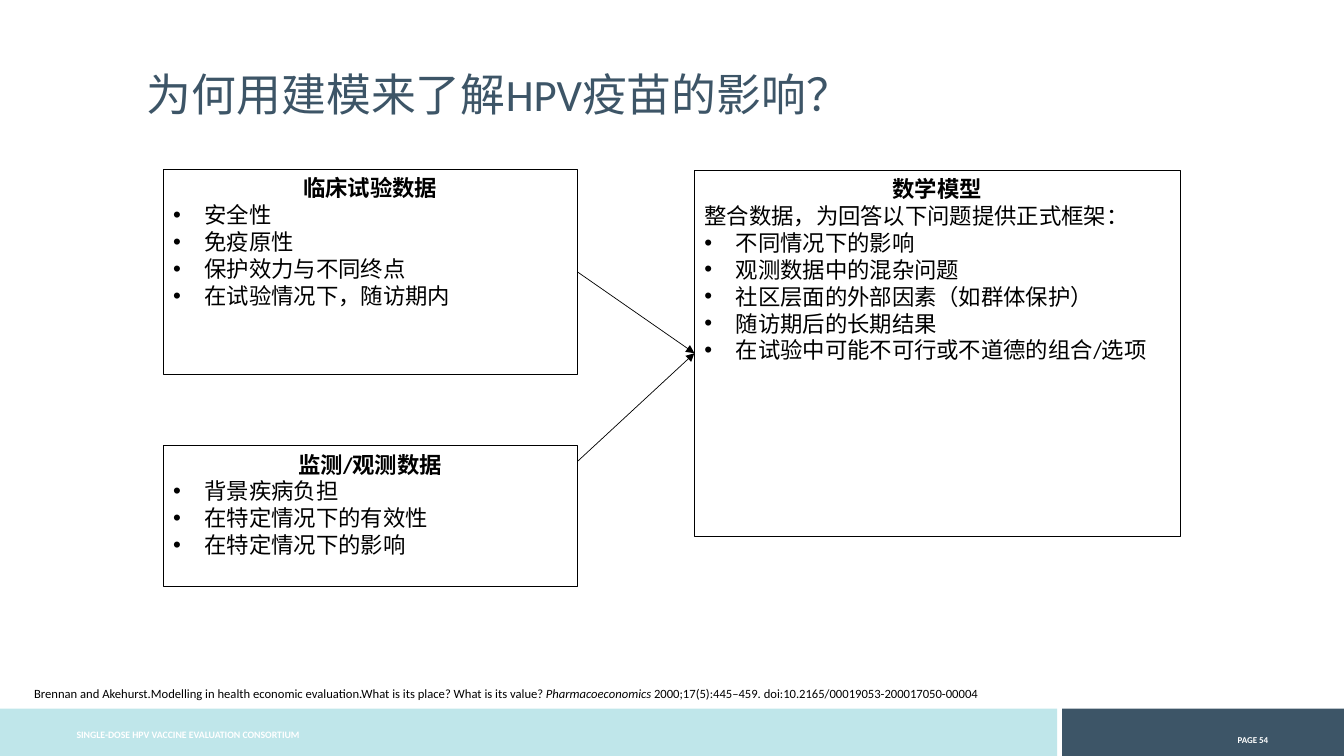
import pptx
import pptx.util
import pptx.dml.color
import pptx.enum.shapes
import pptx.enum.text
import pptx.oxml.ns
import lxml.etree

Cm, Pt = pptx.util.Cm, pptx.util.Pt
ALIGN = pptx.enum.text.PP_ALIGN
ANCHOR = pptx.enum.text.MSO_ANCHOR
qn = pptx.oxml.ns.qn

# Content
COLORS = {"slate": "3D5567", "aqua": "BFE6EA", "white": "FFFFFF", "black": "000000"}
FONT = "Calibri"
TITLE = "为何用建模来了解HPV疫苗的影响？"
# Each box: placeholder index, place in cm, heading, lead line, bullets
BOXES = {
    "trial": (1, (4.11, 4.27, 10.44, 5.16), "临床试验数据", "",
              ["安全性", "免疫原性", "保护效力与不同终点", "在试验情况下，随访期内"]),
    "model": (2, (17.5, 4.29, 12.24, 9.22), "数学模型",
              "整合数据，为回答以下问题提供正式框架：",
              ["不同情况下的影响", "观测数据中的混杂问题",
               "社区层面的外部因素（如群体保护）", "随访期后的长期结果",
               "在试验中可能不可行或不道德的组合/选项"]),
    "watch": (3, (4.11, 11.23, 10.44, 3.56), "监测/观测数据", "",
              ["背景疾病负担", "在特定情况下的有效性", "在特定情况下的影响"]),
}
# Each arrow: source box and drop of its start below the top, in cm
ARROWS = [("trial", 2.58), ("watch", 0.4)]
CITE = [
    ("Brennan and Akehurst.Modelling in health economic evaluation."
     "What is its place? What is its value? ", False),
    ("Pharmacoeconomics", True),
    (" 2000;17(5):445–459. doi:10.2165/00019053-200017050-00004", False),
]
BARS = [((0, 17.86, 26.64, 1.19), "aqua"), ((26.77, 17.86, 7.1, 1.19), "slate")]
GROUP = "SINGLE-DOSE HPV VACCINE EVALUATION CONSORTIUM"
PAGE = "PAGE 54"

deck = pptx.Presentation()
deck.slide_width, deck.slide_height = Cm(33.87), Cm(19.05)
slide = deck.slides.add_slide(deck.slide_layouts.get_by_name("Comparison"))
shapes = slide.shapes
holders = {item.placeholder_format.idx: item for item in slide.placeholders}


def rgb(name):
    return pptx.dml.color.RGBColor.from_string(COLORS[name])


def place(shape, spot):
    shape.left, shape.top, shape.width, shape.height = map(Cm, spot)


def style(part, size, color, bold=False):
    for run in part.runs:
        font = run.font
        font.name, font.size, font.bold = FONT, Pt(size), bold
        font.color.rgb = rgb(color)


def setup(frame, anchor=ANCHOR.TOP, wrap=True):
    frame.auto_size = pptx.enum.text.MSO_AUTO_SIZE.NONE
    frame.vertical_anchor = anchor
    frame.word_wrap = wrap


def label(spot, text, size, color, bold=False, anchor=ANCHOR.TOP, wrap=True):
    frame = shapes.add_textbox(*map(Cm, spot)).text_frame
    setup(frame, anchor, wrap)
    frame.text = text
    style(frame.paragraphs[0], size, color, bold)
    return frame.paragraphs[0]


def bullet(part, on):
    props = part._p.get_or_add_pPr()
    indent = Cm(0.79) if on else 0
    props.set("marL", str(indent))
    props.set("indent", str(-indent))
    if on:
        face = lxml.etree.SubElement(props, qn("a:buFont"))
        face.set("typeface", "Arial")
        lxml.etree.SubElement(props, qn("a:buChar")).set("char", "•")
    else:
        lxml.etree.SubElement(props, qn("a:buNone"))


# Footer
for spot, color in BARS:
    bar = shapes.add_shape(pptx.enum.shapes.MSO_SHAPE.RECTANGLE, *map(Cm, spot))
    bar.shadow.inherit = False
    bar.fill.solid()
    bar.fill.fore_color.rgb = rgb(color)
    bar.line.fill.background()
label((1.68, 18.24, 11.05, 0.56), GROUP, 7, "white", True, ANCHOR.MIDDLE)
page = label((28.12, 18.34, 4.09, 0.56), PAGE, 11, "white", True)
page.alignment = ALIGN.RIGHT
page.runs[0]._r.get_or_add_rPr().set("baseline", "30000")

# Title
title = shapes.title
place(title, (3.45, 1.55, 30.4, 1.63))
setup(title.text_frame, ANCHOR.MIDDLE)
title.text_frame.text = TITLE
title.text_frame.paragraphs[0].alignment = ALIGN.LEFT
style(title.text_frame.paragraphs[0], 32, "slate")

# Boxes
for index, spot, head, lead, points in BOXES.values():
    box = holders.pop(index)
    place(box, spot)
    box.line.color.rgb = rgb("black")
    box.line.width = Pt(0.75)
    frame = box.text_frame
    setup(frame)
    lines = [head] + [lead] * bool(lead) + points
    frame.text = "\n".join(lines)
    start = len(lines) - len(points)
    for row, part in enumerate(frame.paragraphs):
        bullet(part, row >= start)
        part.alignment = ALIGN.LEFT if row else ALIGN.CENTER
        part.space_before = part.space_after = Pt(0)
        part.line_spacing = 1.0
        style(part, 16, "black", row == 0)
spare = holders[4].element
spare.getparent().remove(spare)

# Arrows to the middle of the model's left edge
left, top, _, height = BOXES["model"][1]
for name, drop in ARROWS:
    x, y, width, _ = BOXES[name][1]
    ends = (x + width, y + drop, left, top + height / 2)
    arrow = shapes.add_connector(pptx.enum.shapes.MSO_CONNECTOR.STRAIGHT, *map(Cm, ends))
    arrow.line.color.rgb = rgb("black")
    arrow.line.width = Pt(0.5)
    tip = lxml.etree.SubElement(arrow.line._get_or_add_ln(), qn("a:tailEnd"))
    tip.set("type", "triangle")
    lxml.etree.SubElement(arrow.element.spPr, qn("a:effectLst"))

# Citation
cite = label((0.61, 17.17, 24.74, 0.64), "", 9, "black", wrap=False)
for text, slant in CITE:
    run = cite.add_run()
    run.text = text
    run.font.italic = slant
style(cite, 9, "black")

deck.save("out.pptx")
